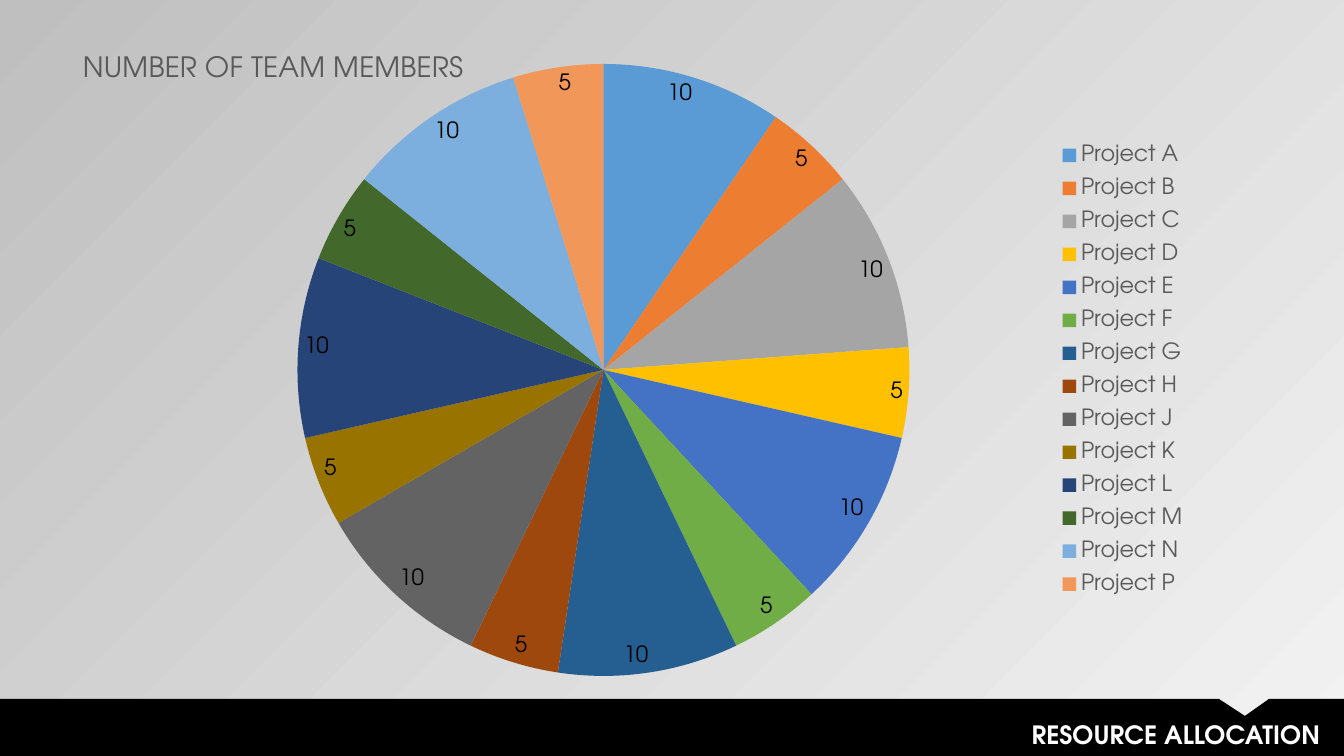
from dataclasses import dataclass

from lxml import etree
from pptx import Presentation
from pptx import util as u
from pptx.chart.data import CategoryChartData
from pptx.dml.color import RGBColor
from pptx.enum import chart as ch
from pptx.enum import text
from pptx.oxml.ns import qn

PX_PER_INCH = 100.8
FONT = "TeX Gyre Adventor"
TITLE = "NUMBER OF TEAM MEMBERS"
GREY = "595959"


@dataclass(frozen=True)
class Box:
    left: int
    top: int
    width: int
    height: int


@dataclass(frozen=True)
class Project:
    name: str
    members: int
    color: str


SLIDE = Box(0, 0, 1344, 756)
CHART = Box(73, 23, 1208, 653)
TITLE_BOX = Box(78, 48, 0, 0)
PLOT_BOX = Box(293, 64, 621, 612)
LEGEND_BOX = Box(1055, 133, 135, 474)
HEADING = Box(417, 714, 913, 40)
BAND = [(0, 699), (1219, 699), (1245, 716), (1269, 699),
        (1344, 699), (1344, 756), (0, 756)]

COLORS = ["5B9BD5", "ED7D31", "A5A5A5", "FFC000", "4472C4", "70AD47", "255E91",
          "9E480E", "636363", "997300", "264478", "43682B", "7CAFDD", "F1975A"]
PROJECTS = [Project(f"Project {letter}", 5 if i % 2 else 10, color)
            for i, (letter, color) in enumerate(zip("ABCDEFGHJKLMNP", COLORS))]


def px(n: int) -> u.Length:
    return u.Inches(n / PX_PER_INCH)


def place(box: Box) -> tuple[u.Length, ...]:
    return px(box.left), px(box.top), px(box.width), px(box.height)


def rgb(color: str) -> RGBColor:
    return RGBColor.from_string(color)


def style_font(font, size: int, color: str, bold: bool = False) -> None:
    font.name = FONT
    font.size = u.Pt(size)
    font.bold = bold
    font.color.rgb = rgb(color)


def set_layout(chart, tag: str, index: int, box: Box, inner: bool = False) -> None:
    parent = chart.element.find(f".//{qn(tag)}")
    for old in parent.findall(qn("c:layout")):
        parent.remove(old)
    layout = etree.Element(qn("c:layout"))
    manual = etree.SubElement(layout, qn("c:manualLayout"))
    values = {"xMode": "edge", "yMode": "edge",
              "x": (box.left - CHART.left) / CHART.width,
              "y": (box.top - CHART.top) / CHART.height}
    if inner:
        values = {"layoutTarget": "inner", **values}
    if box.width:
        values |= {"w": box.width / CHART.width, "h": box.height / CHART.height}
    for name, value in values.items():
        etree.SubElement(manual, qn(f"c:{name}")).set("val", str(value))
    parent.insert(index, layout)


def paint_background(slide) -> None:
    fill = slide.background.fill
    fill.gradient()
    fill.gradient_angle = 135
    for stop, color in zip(fill.gradient_stops, ("F2F2F2", "BFBFBF")):
        stop.color.rgb = rgb(color)


def add_band(slide) -> None:
    builder = slide.shapes.build_freeform(*BAND[0], scale=px(1))
    builder.add_line_segments(BAND[1:], close=True)
    sp = builder.convert_to_shape()
    sp.shadow.inherit = False
    sp.fill.solid()
    sp.fill.fore_color.rgb = rgb("000000")
    sp.line.fill.background()


def add_heading(slide) -> None:
    tf = slide.shapes.add_textbox(*place(HEADING)).text_frame
    tf.word_wrap = True
    p = tf.paragraphs[0]
    p.alignment = text.PP_ALIGN.RIGHT
    r = p.add_run()
    r.text = "RESOURCE ALLOCATION"
    style_font(r.font, 18, "FFFFFF", bold=True)


def add_pie(slide) -> None:
    data = CategoryChartData()
    data.categories = [project.name for project in PROJECTS]
    data.add_series(TITLE, [project.members for project in PROJECTS])
    chart = slide.shapes.add_chart(ch.XL_CHART_TYPE.PIE, *place(CHART), data).chart
    style_font(chart.font, 10, "000000")

    r = chart.chart_title.text_frame.paragraphs[0].add_run()
    r.text = TITLE
    style_font(r.font, 20, GREY)
    set_layout(chart, "c:title", 1, TITLE_BOX)

    chart.has_legend = True
    chart.legend.position = ch.XL_LEGEND_POSITION.RIGHT
    chart.legend.include_in_layout = False
    style_font(chart.legend.font, 16, GREY)
    set_layout(chart, "c:legend", 1, LEGEND_BOX)

    plot = chart.plots[0]
    plot.vary_by_categories = True
    set_layout(chart, "c:plotArea", 0, PLOT_BOX, inner=True)
    for i, project in enumerate(PROJECTS):
        wedge = plot.series[0].points[i].format
        wedge.fill.solid()
        wedge.fill.fore_color.rgb = rgb(project.color)
        wedge.line.fill.background()

    labels = plot.series[0].data_labels
    labels.show_value = True
    labels.position = ch.XL_LABEL_POSITION.INSIDE_END
    style_font(labels.font, 16, "000000")


def main() -> None:
    prs = Presentation()
    prs.slide_width, prs.slide_height = px(SLIDE.width), px(SLIDE.height)
    slide = prs.slides.add_slide(prs.slide_layouts[6])
    paint_background(slide)
    add_band(slide)
    add_heading(slide)
    add_pie(slide)
    prs.save("out.pptx")


if __name__ == "__main__":
    main()
